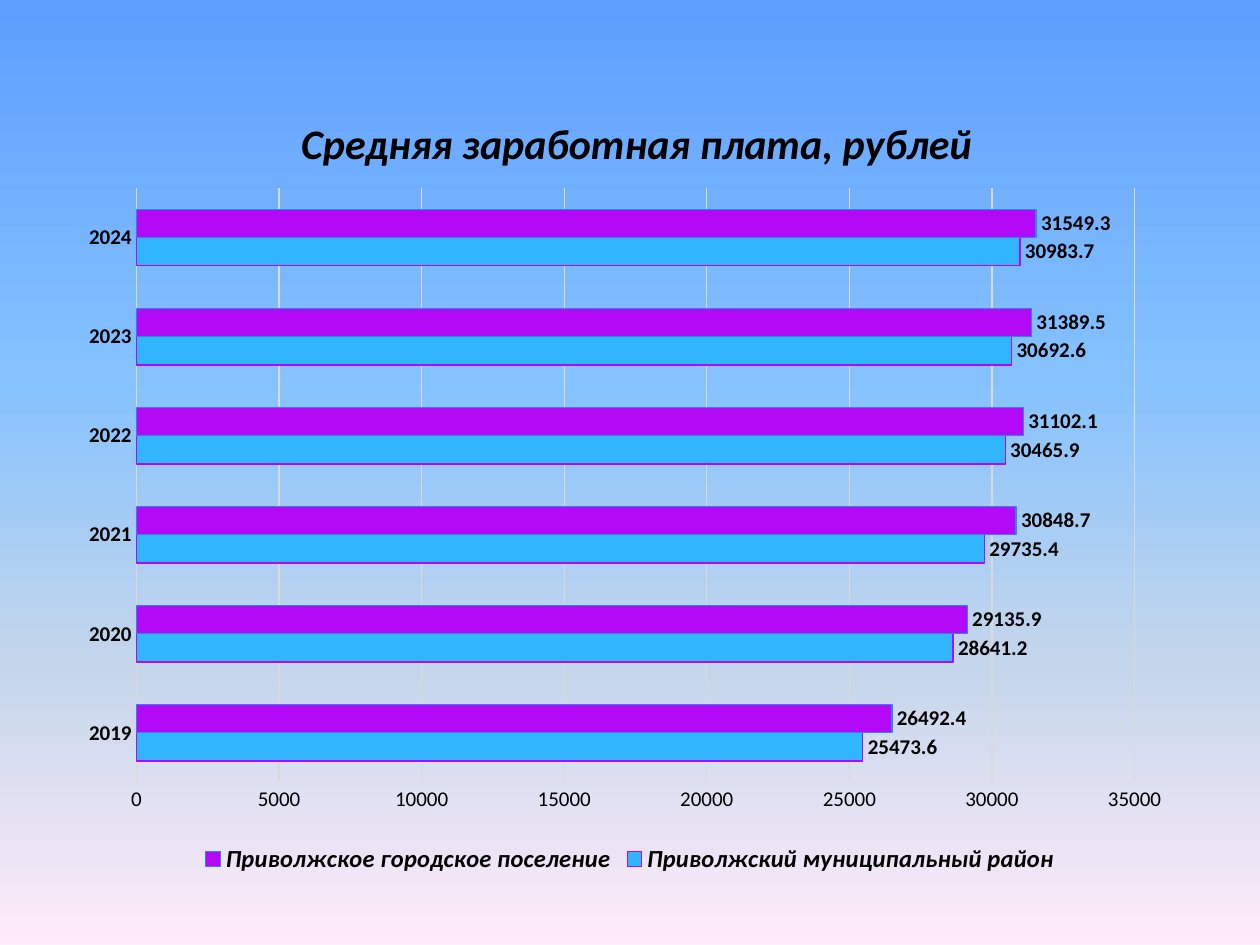
import pptx
import pptx.chart.data
import pptx.dml.color
import pptx.enum.chart
import pptx.oxml
import pptx.oxml.ns
import pptx.util

COLORS = {
    "district": "31B6FD",
    "town": "B309F7",
    "town_line": "2D83F4",
    "grid": "D9D9D9",
    "text": "000000",
}
BACKGROUND = [(0, "5E9EFF"), (40, "85C2FF"), (70, "C4D6EB"), (100, "FFEBFA")]
YEARS = ["2019", "2020", "2021", "2022", "2023", "2024"]
SERIES = [
    ("Приволжский муниципальный район",
     [25473.6, 28641.2, 29735.4, 30465.9, 30692.6, 30983.7], "district", "town"),
    ("Приволжское городское поселение",
     [26492.4, 29135.9, 30848.7, 31102.1, 31389.5, 31549.3], "town", "town_line"),
]


def rgb(name):
    return pptx.dml.color.RGBColor.from_string(COLORS[name])


def style_font(font, size, bold=False, italic=False):
    font.name = "Calibri"
    font.size = pptx.util.Pt(size)
    font.bold = bold
    font.italic = italic
    font.color.rgb = rgb("text")


def style_line(line, color, width):
    line.color.rgb = rgb(color)
    line.width = pptx.util.Pt(width)


def paint_background(page):
    fill = page.background.fill
    fill.gradient()
    fill.gradient_angle = 270
    stops = page.element.find(".//" + pptx.oxml.ns.qn("a:gsLst"))
    for stop in list(stops):
        stops.remove(stop)
    for position, color in BACKGROUND:
        stops.append(pptx.oxml.parse_xml(
            f'<a:gs {pptx.oxml.ns.nsdecls("a")} pos="{position * 1000}">'
            f'<a:srgbClr val="{color}"/></a:gs>'))


def place(chart, tag, index, target="", **shares):
    part = chart.element.find(".//" + pptx.oxml.ns.qn(tag))
    for old in part.findall(pptx.oxml.ns.qn("c:layout")):
        part.remove(old)
    values = "".join(f'<c:{key} val="{share}"/>' for key, share in shares.items())
    part.insert(index, pptx.oxml.parse_xml(
        f'<c:layout {pptx.oxml.ns.nsdecls("c")}><c:manualLayout>{target}'
        f'<c:xMode val="edge"/><c:yMode val="edge"/>{values}'
        '</c:manualLayout></c:layout>'))


def style_axes(chart):
    years, wages = chart.category_axis, chart.value_axis
    for axis in (years, wages):
        axis.major_tick_mark = pptx.enum.chart.XL_TICK_MARK.NONE
        axis.minor_tick_mark = pptx.enum.chart.XL_TICK_MARK.NONE
        style_font(axis.tick_labels.font, 12, bold=axis is years)
    style_line(years.format.line, "grid", 1)
    wages.format.line.fill.background()
    wages.minimum_scale, wages.maximum_scale, wages.major_unit = 0, 35000, 5000
    wages.has_major_gridlines = True
    style_line(wages.major_gridlines.format.line, "grid", 0.75)


def style_series(series, color, outline):
    series.invert_if_negative = False
    series.format.fill.solid()
    series.format.fill.fore_color.rgb = rgb(color)
    style_line(series.format.line, outline, 0.75)
    labels = series.data_labels
    labels.show_value = True
    labels.position = pptx.enum.chart.XL_LABEL_POSITION.OUTSIDE_END
    style_font(labels.font, 12, bold=True)


def add_wage_chart(page, left, top, width, height):
    data = pptx.chart.data.CategoryChartData()
    data.categories = YEARS
    for name, values, _, _ in SERIES:
        data.add_series(name, values)
    chart = page.shapes.add_chart(
        pptx.enum.chart.XL_CHART_TYPE.BAR_CLUSTERED,
        int(left), int(top), int(width), int(height), data).chart
    style_font(chart.font, 14)

    chart.has_title = True
    para = chart.chart_title.text_frame.paragraphs[0]
    span = para.add_run()
    span.text = "Средняя заработная плата, рублей"
    style_font(span.font, 24, bold=True, italic=True)
    place(chart, "c:title", 1, x=0.2, y=0.04)

    plot = chart.plots[0]
    plot.gap_width = 150
    plot.vary_by_categories = False
    place(chart, "c:plotArea", 0, '<c:layoutTarget val="inner"/>',
          x=0.06, y=0.14, w=0.89, h=0.74)
    for series, (_, _, color, outline) in zip(plot.series, SERIES):
        style_series(series, color, outline)
    style_axes(chart)

    chart.has_legend = True
    chart.legend.position = pptx.enum.chart.XL_LEGEND_POSITION.BOTTOM
    chart.legend.include_in_layout = False
    style_font(chart.legend.font, 14, bold=True, italic=True)


def main():
    deck = pptx.Presentation()
    deck.slide_width = pptx.util.Inches(10)
    deck.slide_height = pptx.util.Inches(7.5)
    page = deck.slides.add_slide(deck.slide_layouts[6])
    paint_background(page)
    width, height = deck.slide_width, deck.slide_height
    add_wage_chart(page, 0.055 * width, 0.08 * height, 0.89 * width, 0.85 * height)
    deck.save("out.pptx")


if __name__ == "__main__":
    main()
